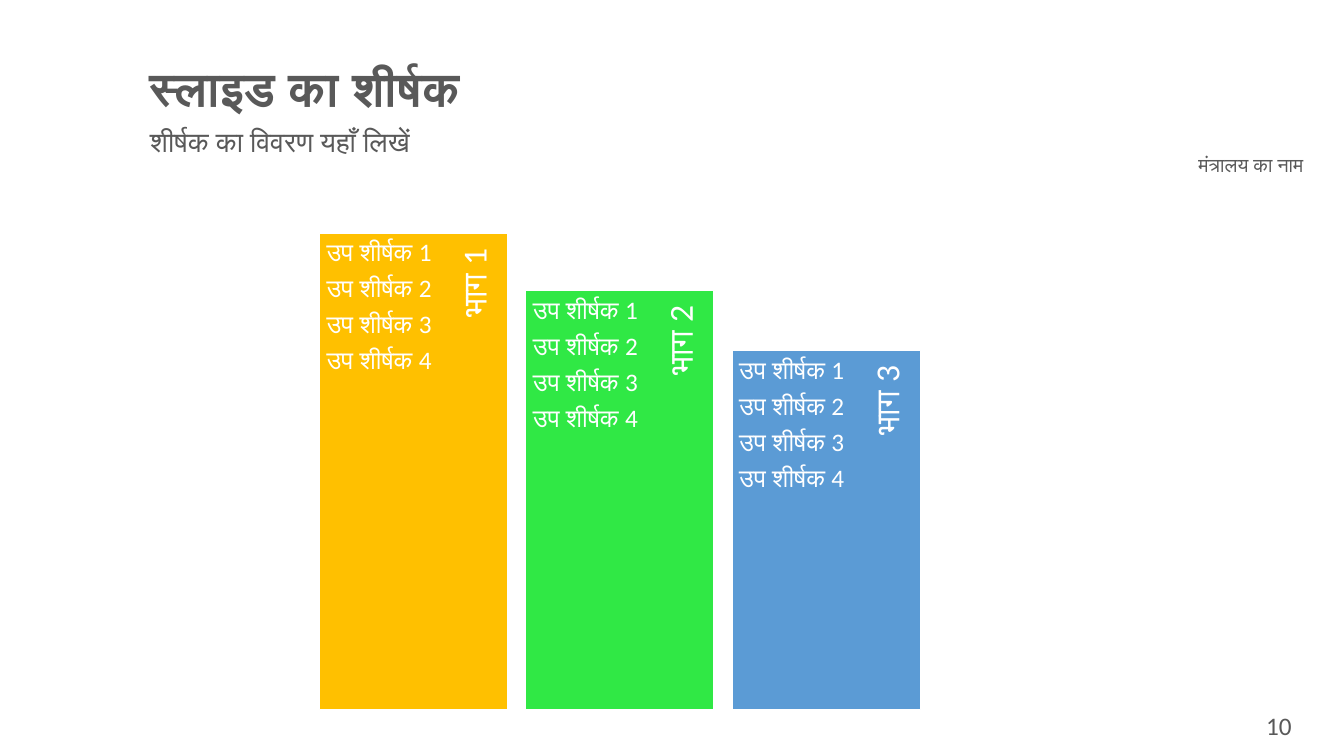
from dataclasses import dataclass

from lxml.etree import SubElement
from pptx import Presentation
from pptx.dml.color import RGBColor
from pptx.enum.shapes import MSO_SHAPE
from pptx.enum.text import MSO_ANCHOR, PP_ALIGN
from pptx.oxml.ns import qn
from pptx.util import Cm, Pt


@dataclass(frozen=True)
class Theme:
    font: str = "Calibri"
    grey: str = "595959"
    white: str = "FFFFFF"
    bars: tuple = ("FFC000", "30E845", "5B9BD5")
    title: int = 34
    subtitle: int = 20
    ministry: int = 14
    label: int = 24
    body: int = 18


THEME = Theme()

# Bar layout in centimetres
BAR_LEFT, BAR_STEP, BAR_WIDTH, BAR_BOTTOM = 8.05, 5.2, 4.75, 17.88
BAR_TOPS = (5.87, 7.32, 8.84)
LABEL_CENTRE, LABEL_HEIGHT = 3.98, 1.25
LIST_WIDTH = 3.38


def set_space_after(p, percent):
    """Space after a paragraph as a share of the line."""
    p.space_after = Pt(0)
    spacing = p._p.pPr.find(qn("a:spcAft"))
    spacing.remove(spacing[0])
    SubElement(spacing, qn("a:spcPct"), val=str(percent * 1000))


def add_text(s, box, lines, size, color=THEME.grey, bold=False,
             align=PP_ALIGN.LEFT, anchor=MSO_ANCHOR.TOP, insets=None,
             line_spacing=None, after=None):
    sp = s.shapes.add_textbox(*(Cm(v) for v in box))
    tf = sp.text_frame
    tf.word_wrap = True
    tf.vertical_anchor = anchor
    if insets:
        (tf.margin_left, tf.margin_top,
         tf.margin_right, tf.margin_bottom) = (Cm(v) for v in insets)
    for i, line in enumerate(lines):
        p = tf.add_paragraph() if i else tf.paragraphs[0]
        p.alignment = align
        if line_spacing:
            p.line_spacing = line_spacing
        if after:
            set_space_after(p, after)
        r = p.add_run()
        r.text = line
        r.font.name = THEME.font
        r.font.size = Pt(size)
        r.font.bold = bold
        r.font.color.rgb = RGBColor.from_string(color)
    return sp


def add_bar(s, left, top, height, color):
    sp = s.shapes.add_shape(MSO_SHAPE.RECTANGLE, Cm(left), Cm(top),
                            Cm(BAR_WIDTH), Cm(height))
    sp.shadow.inherit = False
    sp.fill.solid()
    sp.fill.fore_color.rgb = RGBColor.from_string(color)
    sp.line.color.rgb = RGBColor.from_string(THEME.white)
    sp.line.width = Pt(1)


def add_label(s, left, top, height, text):
    """Label turned upwards, ending at the top of its bar."""
    length = 0.9 * height
    box = (left + LABEL_CENTRE - length / 2,
           top + length / 2 - LABEL_HEIGHT / 2, length, LABEL_HEIGHT)
    sp = add_text(s, box, [text], THEME.label, THEME.white,
                  align=PP_ALIGN.RIGHT, anchor=MSO_ANCHOR.MIDDLE,
                  insets=(0.25, 0, 0.38, 0.08), line_spacing=0.9, after=35)
    sp.rotation = 270


def add_part(s, index, top, color):
    left = BAR_LEFT + index * BAR_STEP
    height = BAR_BOTTOM - top
    add_bar(s, left, top, height, color)
    add_label(s, left, top, height, f"भाग {index + 1}")
    add_text(s, (left, top, LIST_WIDTH, height),
             [f"उप शीर्षक {n}" for n in range(1, 5)], THEME.body, THEME.white,
             insets=(0.18,) * 4, line_spacing=0.9, after=35)


def main():
    prs = Presentation()
    prs.slide_width, prs.slide_height = Cm(33.87), Cm(19.05)
    s = prs.slides.add_slide(prs.slide_layouts[6])

    # Headings
    add_text(s, (29.95, 3.73, 3.99, 0.86), ["मंत्रालय का नाम"], THEME.ministry)
    add_text(s, (3.53, 1.52, 24.41, 1.4), ["स्लाइड का शीर्षक"], THEME.title,
             bold=True, line_spacing=0.9)
    add_text(s, (3.53, 3.12, 24.41, 1.6), ["शीर्षक का विवरण यहाँ लिखें"],
             THEME.subtitle, line_spacing=0.9)

    # Descending bars
    for i, (top, color) in enumerate(zip(BAR_TOPS, THEME.bars)):
        add_part(s, i, top, color)

    # Page number
    add_text(s, (30.73, 17.78, 3, 1.14), ["10"], THEME.body,
             align=PP_ALIGN.CENTER)

    prs.save("out.pptx")


if __name__ == "__main__":
    main()
